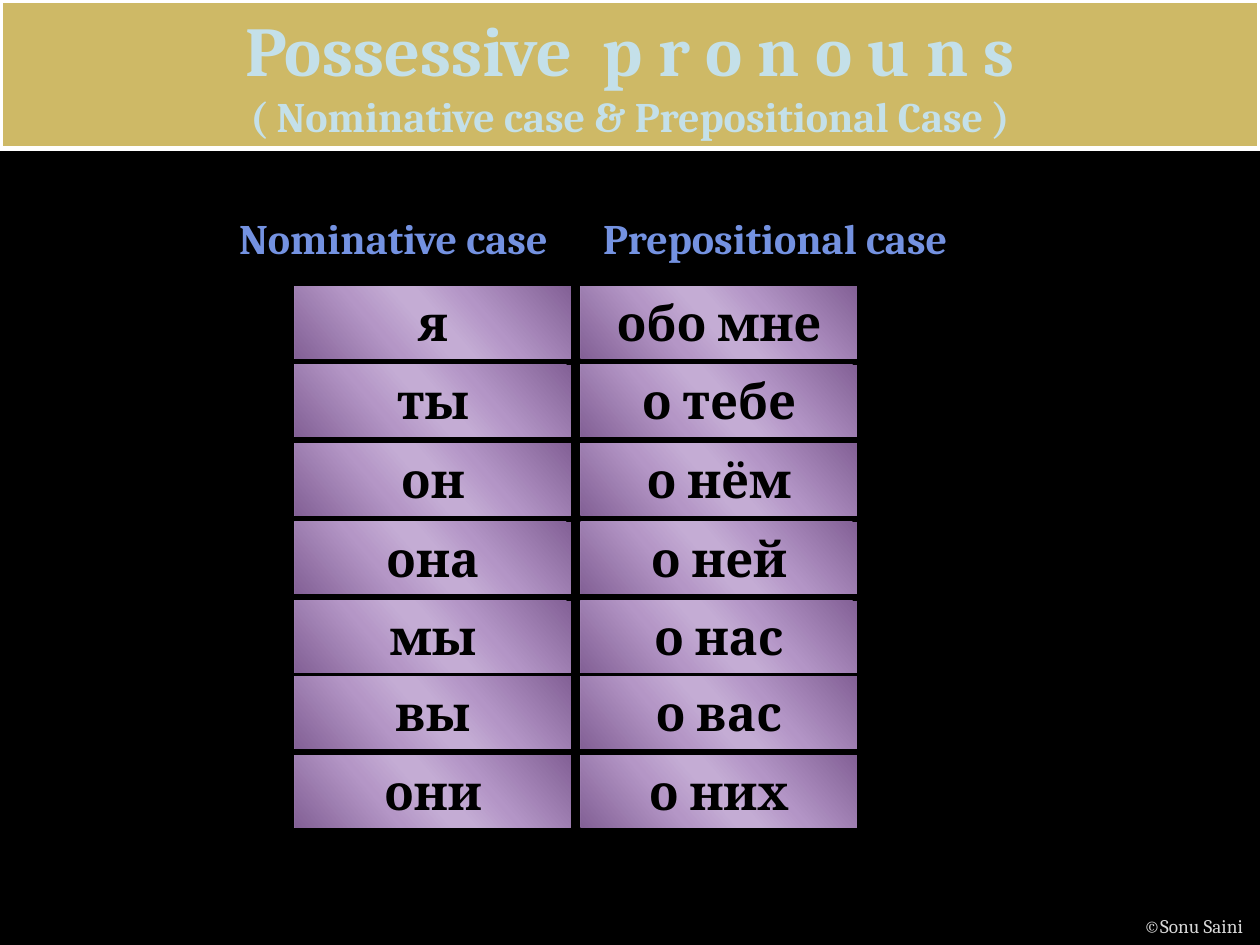
"""Build a slide that sets Russian nominative and prepositional pronouns side by side."""
from lxml import etree
from pptx import Presentation
from pptx.dml.color import RGBColor
from pptx.enum.shapes import MSO_SHAPE
from pptx.enum.text import MSO_ANCHOR, MSO_AUTO_SIZE, PP_ALIGN
from pptx.oxml.ns import qn
from pptx.util import Pt

RECTANGLE = MSO_SHAPE.RECTANGLE
TOP = MSO_ANCHOR.TOP
GROW = MSO_AUTO_SIZE.SHAPE_TO_FIT_TEXT
LEFT, CENTER = PP_ALIGN.LEFT, PP_ALIGN.CENTER

BLACK = RGBColor(0x00, 0x00, 0x00)
WHITE = RGBColor(0xFF, 0xFF, 0xFF)
GOLD = RGBColor(0xCE, 0xB9, 0x66)
ICE = RGBColor(0xC4, 0xE0, 0xE9)
LILAC = RGBColor(0xC9, 0xBE, 0xD5)
BLUE = RGBColor(0x74, 0x92, 0xE1)
GRAY = RGBColor(0xD9, 0xD9, 0xD9)
PLUM = RGBColor(0x83, 0x61, 0x96)
VIOLET = RGBColor(0xB3, 0x95, 0xC6)
PALE_VIOLET = RGBColor(0xC4, 0xAC, 0xD4)
MID_VIOLET = RGBColor(0xB4, 0x96, 0xC6)

CELL_STOPS = [(0, PLUM), (33, VIOLET), (47, PALE_VIOLET),
              (53, PALE_VIOLET), (68, MID_VIOLET), (100, PLUM)]
PRONOUNS = [("я", "обо мне"), ("ты", "о тебе"), ("он", "о нём"), ("она", "о ней"),
            ("мы", "о нас"), ("вы", "о вас"), ("они", "о них")]
COLUMN_LEFTS = (168.5, 332)
ROW_TOPS = (163.5, 208.3, 253.2, 298.2, 343.2, 386.5, 431.5)
CELL_WIDTH, CELL_HEIGHT = 157.7, 41.2


def add_color(parent, color):
    """Append an RGB colour element to parent and return it."""
    return etree.SubElement(parent, qn("a:srgbClr"), val=str(color))


def write_text(paragraph, text, size, color, bold=False, align=LEFT,
               font_name="Cambria", outline=None):
    """Add a formatted run of text to paragraph."""
    paragraph.alignment = align
    run = paragraph.add_run()
    run.text = text
    font = run.font
    font.name, font.size, font.bold = font_name, Pt(size), bold
    font.color.rgb = color
    if outline is not None:
        line = etree.Element(qn("a:ln"), w=str(Pt(1)))
        add_color(etree.SubElement(line, qn("a:solidFill")), outline)
        run._r.get_or_add_rPr().insert(0, line)


class SlideBuilder:
    """Hold the current slide and its style."""

    def __init__(self, slide):
        """Take the slide and paint its background."""
        self.slide = slide
        fill = slide.background.fill
        fill.solid()
        fill.fore_color.rgb = BLACK

    def add_box(self, left, top, width, height):
        """Add a plain rectangle whose text starts at the top."""
        shape = self.slide.shapes.add_shape(
            RECTANGLE, Pt(left), Pt(top), Pt(width), Pt(height))
        frame = shape.text_frame
        frame.word_wrap, frame.vertical_anchor, frame.auto_size = True, TOP, GROW
        return shape

    def add_shadow(self, shape, opacity, blur, distance):
        """Cast a black shadow to the lower right."""
        shape.shadow.inherit = False
        effects = shape._element.spPr.find(qn("a:effectLst"))
        shadow = etree.SubElement(
            effects, qn("a:outerShdw"), blurRad=str(Pt(blur)), dist=str(Pt(distance)),
            dir=str(45 * 60000), algn="tl", rotWithShape="0")
        etree.SubElement(add_color(shadow, BLACK), qn("a:alpha"), val=str(opacity * 1000))

    def add_banner(self, title, subtitle):
        """Add the framed title band across the slide."""
        shape = self.add_box(0, 0, 720, 85)
        shape.fill.solid()
        shape.fill.fore_color.rgb = GOLD
        shape.line.color.rgb = WHITE
        shape.line.width = Pt(3)
        self.add_shadow(shape, 35, 10.2, 8)
        frame = shape.text_frame
        style = dict(color=ICE, bold=True, align=CENTER, outline=LILAC)
        write_text(frame.paragraphs[0], title, size=40, **style)
        write_text(frame.add_paragraph(), subtitle, size=24, **style)

    def add_cell(self, text, left, top):
        """Add a violet gradient cell with one pronoun."""
        shape = self.add_box(left, top, CELL_WIDTH, CELL_HEIGHT)
        shape.fill.gradient()
        shape.fill.gradient_angle = 360 - 139
        stops = shape._element.spPr.find(qn("a:gradFill")).find(qn("a:gsLst"))
        for stop in list(stops):
            stops.remove(stop)
        for position, color in CELL_STOPS:
            add_color(etree.SubElement(stops, qn("a:gs"), pos=str(position * 1000)), color)
        shape.line.fill.background()
        self.add_shadow(shape, 26, 15, 18)
        write_text(shape.text_frame.paragraphs[0], text, size=28, color=BLACK,
                   bold=True, align=CENTER)

    def add_label(self, text, left, top, width, height, wrap=True, **style):
        """Add a text box with one line."""
        box = self.slide.shapes.add_textbox(Pt(left), Pt(top), Pt(width), Pt(height))
        frame = box.text_frame
        frame.word_wrap, frame.auto_size = wrap, GROW
        write_text(frame.paragraphs[0], text, **style)


def main():
    """Build and save the presentation."""
    presentation = Presentation()
    presentation.slide_width, presentation.slide_height = Pt(720), Pt(540)
    builder = SlideBuilder(presentation.slides.add_slide(presentation.slide_layouts[6]))

    builder.add_banner("Possessive  p r o n o u n s",
                       "( Nominative case & Prepositional Case )")
    heading = dict(size=24, color=BLUE, bold=True)
    builder.add_label("Nominative case", 129.5, 118, 214, 36, **heading)
    builder.add_label("Prepositional case", 337.5, 118, 242, 36, **heading)
    for column, left in enumerate(COLUMN_LEFTS):
        for pair, top in zip(PRONOUNS, ROW_TOPS):
            builder.add_cell(pair[column], left, top)
    builder.add_label("©Sonu Saini", 646.5, 519, 73.5, 21, wrap=False, size=11, color=GRAY)

    presentation.save("out.pptx")


if __name__ == "__main__":
    main()
